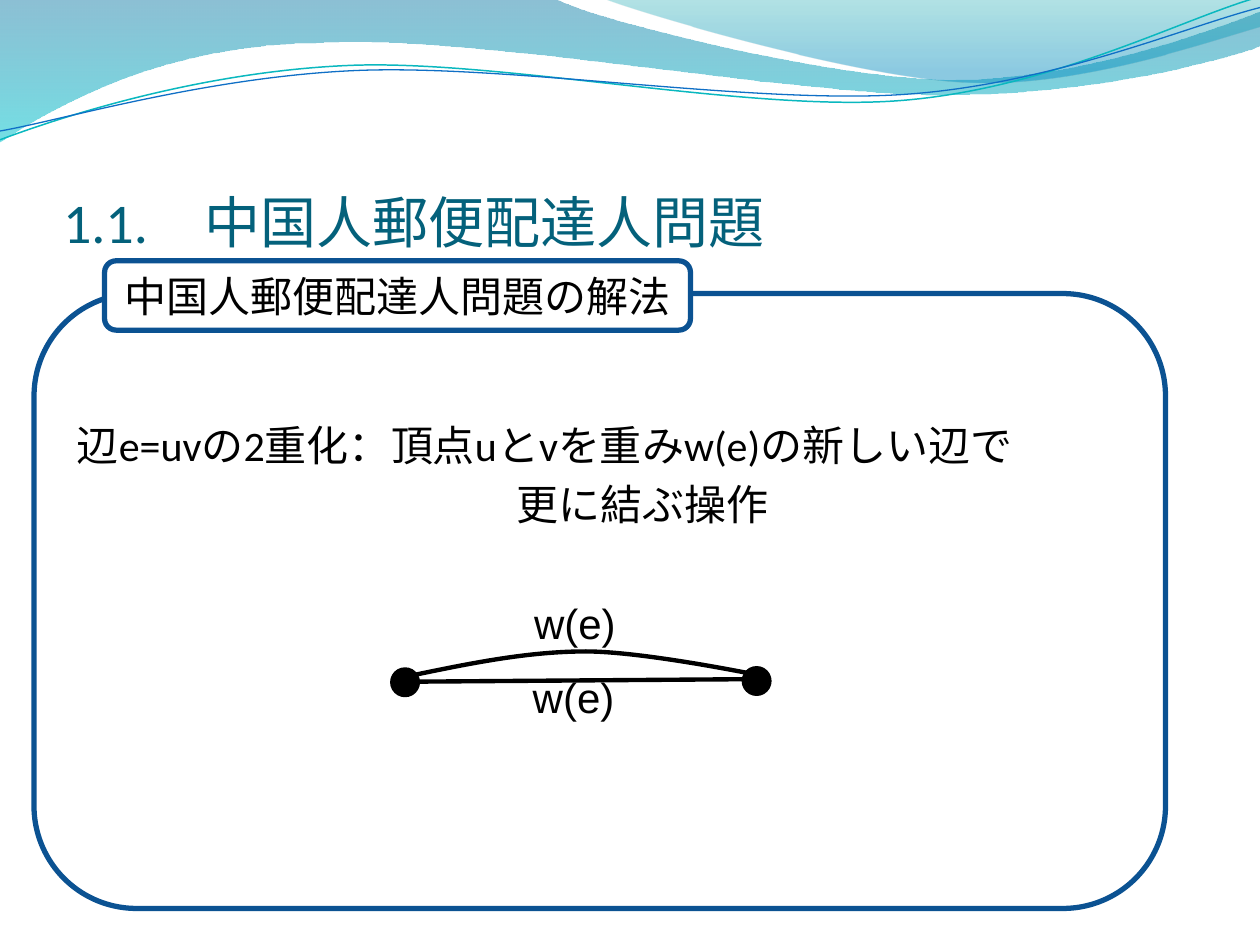
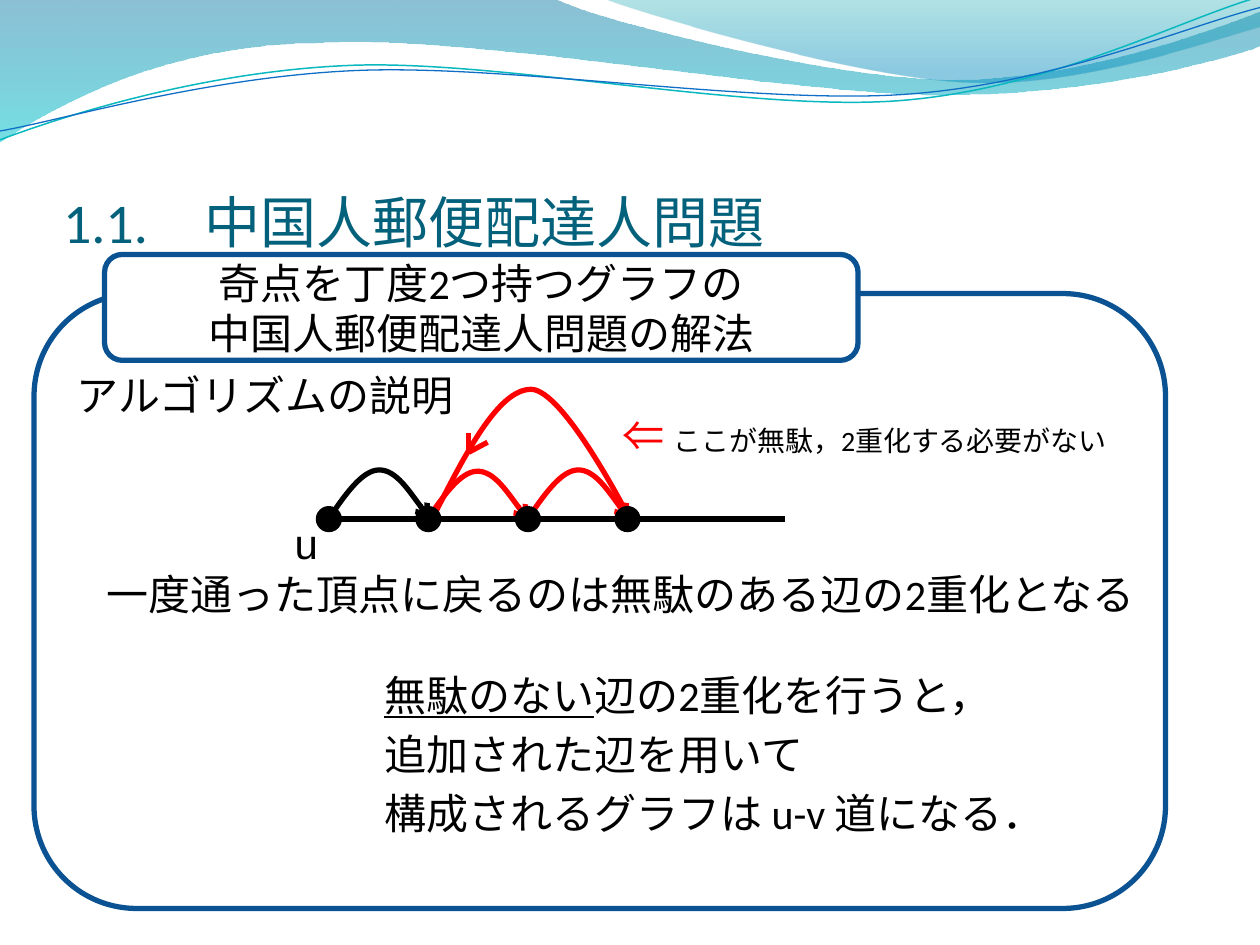
from dataclasses import dataclass

from pptx import Presentation
from pptx import util as u
from pptx.dml.color import RGBColor
from pptx.enum import shapes, text
from pptx.oxml.ns import qn
from lxml import etree

KIND = shapes.MSO_SHAPE
ALIGN = text.PP_ALIGN
ANCHOR = text.MSO_ANCHOR


@dataclass(frozen=True)
class Theme:
    ink: str = "000000"
    paper: str = "FFFFFF"
    title: str = "04617B"
    frame: str = "0B5292"
    red: str = "FF0000"
    teal: str = "0AB8BF"
    blue: str = "0F6FC6"
    deep: tuple = ((0, "0074A1", 45), (1, "00C6CF", 55))
    light: tuple = ((0, "00A1A9", 30), (0.8, "008BBF", 45))
    face: str = "Calibri"
    label: str = "Arial"
    head: int = 32
    body: int = 24
    note: int = 16
    gap: int = 5


def put(item, values):
    for name, value in values.items():
        setattr(item, name, value)


def box(left, top, width, height):
    return {"left": u.Inches(left), "top": u.Inches(top),
            "width": u.Inches(width), "height": u.Inches(height)}


class Deck:
    def __init__(self, theme):
        self.theme = theme
        self.prs = Presentation()
        put(self.prs, {"slide_width": u.Inches(10), "slide_height": u.Inches(7.5)})
        self.layout = self.prs.slide_layouts[1]
        self.slide = None

    def page(self, title):
        self.slide = self.prs.slides.add_slide(self.layout)
        head = self.slide.shapes.title
        put(head, box(0.5, 0.77, 9, 1.25))
        put(head.text_frame, {"margin_left": 0, "margin_right": 0,
                              "margin_bottom": 0, "vertical_anchor": ANCHOR.BOTTOM})
        self.words(head.text_frame, [title], size=self.theme.head, hue=self.theme.title)

    def words(self, frame, lines, size=None, hue=None, face=None, align=ALIGN.LEFT):
        put(frame, {"word_wrap": True, "auto_size": text.MSO_AUTO_SIZE.NONE})
        for i, line in enumerate(lines):
            para = frame.add_paragraph() if i else frame.paragraphs[0]
            put(para, {"alignment": align, "space_before": u.Pt(0)})
            for part in [line] if isinstance(line, str) else line:
                words, style = (part, {}) if isinstance(part, str) else part
                run = para.add_run()
                run.text = words
                run.font.color.rgb = RGBColor.from_string(
                    style.get("hue", hue or self.theme.ink))
                put(run.font, {"name": face or self.theme.face,
                               "size": u.Pt(style.get("size", size or self.theme.body)),
                               "underline": style.get("line")})

    def body(self, place, lines, shifts):
        item = self.slide.placeholders[1]
        put(item, box(*place))
        self.words(item.text_frame, lines)
        for para, shift in zip(item.text_frame.paragraphs, shifts):
            para.space_before = u.Pt(self.theme.gap)
            props = para._p.get_or_add_pPr()
            props.set("marL", str(u.Inches(shift)))
            props.set("indent", "0")
            etree.SubElement(props, qn("a:buNone"))

    def label(self, place, line, face=None, wrap=True):
        item = self.slide.shapes.add_textbox(*box(*place).values())
        self.words(item.text_frame, [line], face=face)
        item.text_frame.word_wrap = wrap

    def paint(self, item, fill=None, line=None, width=1):
        item.shadow.inherit = False
        if fill:
            item.fill.solid()
            item.fill.fore_color.rgb = RGBColor.from_string(fill)
        else:
            item.fill.background()
        if line:
            item.line.color.rgb = RGBColor.from_string(line)
            item.line.width = u.Pt(width)
        else:
            item.line.fill.background()

    def shape(self, kind, place, fill, line, width):
        item = self.slide.shapes.add_shape(kind, *box(*place).values())
        self.paint(item, fill, line, width)
        return item

    def frame(self):
        self.shape(KIND.ROUNDED_RECTANGLE, (0.27, 2.33, 8.98, 4.88),
                   None, self.theme.frame, 3)

    def tab(self, place, lines):
        item = self.shape(KIND.ROUNDED_RECTANGLE, place,
                          self.theme.paper, self.theme.frame, 3)
        item.text_frame.vertical_anchor = ANCHOR.MIDDLE
        self.words(item.text_frame, lines, align=ALIGN.CENTER)

    def dot(self, left, top, size):
        self.shape(KIND.OVAL, (left, top, size, size),
                   self.theme.ink, self.theme.ink, 2)

    def line(self, start, end, hue, width):
        ends = [u.Inches(v) for v in (*start, *end)]
        item = self.slide.shapes.add_connector(shapes.MSO_CONNECTOR.STRAIGHT, *ends)
        item.line.color.rgb = RGBColor.from_string(hue)
        item.line.width = u.Pt(width)
        etree.SubElement(item.element.spPr, qn("a:effectLst"))

    def curve(self, start, parts, close=False, line=None, width=1):
        maker = self.slide.shapes.build_freeform(*map(u.Inches, start), scale=1.0)
        maker.add_line_segments(
            [tuple(map(u.Inches, spot)) for part in parts for spot in part], close=close)
        item = maker.convert_to_shape()
        nodes = iter(item.element.findall(".//" + qn("a:lnTo")))
        for part in parts:
            first, *rest = [next(nodes) for _ in part]
            if rest:
                bend = etree.Element(qn("a:cubicBezTo"))
                first.addprevious(bend)
                for node in (first, *rest):
                    bend.append(node[0])
                    node.getparent().remove(node)
        self.paint(item, line=line, width=width)
        return item

    def arc(self, left, base, wide, high, hue, width, arrow=False):
        top, end = base - high, (left + wide, base)
        rise = ((left + wide / 6, base - high / 2), (left + wide / 3, top),
                (left + wide / 2, top))
        fall = ((left + wide * 2 / 3, top), end, end)
        item = self.curve((left, base), [rise, fall], line=hue, width=width)
        if arrow:
            etree.SubElement(item.element.spPr.find(qn("a:ln")),
                             qn("a:tailEnd"), type="arrow")

    def band(self, start, parts, stops):
        item = self.curve(start, parts, close=True)
        item.fill.gradient()
        item.fill.gradient_angle = 270
        for stop, (place, hue, _) in zip(item.fill.gradient_stops, stops):
            stop.position = place
            stop.color.rgb = RGBColor.from_string(hue)
        tints = item.element.spPr.find(qn("a:gradFill")).iter(qn("a:srgbClr"))
        for tint, (_, _, alpha) in zip(list(tints), stops):
            etree.SubElement(tint, qn("a:alpha"), val=str(alpha * 1000))
        return item

    def waves(self):
        t = self.theme
        items = [
            self.band((0, -0.01), [
                ((4.4, -0.01),),
                ((4.76, 0.17), (6.64, 0.63), (7.58, 0.63)),
                ((8.53, 0.63), (9.58, 0.26), (10, 0.09)),
                ((10.01, 0.36),),
                ((9.83, 0.44), (8.7, 0.76), (7.46, 0.75)),
                ((6.22, 0.75), (3.82, 0.28), (2.57, 0.34)),
                ((1.29, 0.35), (0.46, 0.83), (-0.01, 1.13))], t.deep),
            self.band((4.79, -0.01), [
                ((5.09, 0.11), (6.82, 0.62), (7.69, 0.65)),
                ((8.56, 0.69), (9.61, 0.32), (10, 0.21)),
                ((10, 0),)], t.light),
            self.curve((0, 1.11), [
                ((0.48, 0.93), (1.58, 0.57), (2.77, 0.52)),
                ((3.95, 0.47), (5.93, 0.89), (7.13, 0.8)),
                ((8.33, 0.71), (9.38, 0.15), (9.98, -0.02))], line=t.teal, width=0.85),
            self.curve((0, 1.04), [
                ((0.47, 0.96), (1.64, 0.61), (2.83, 0.56)),
                ((4.03, 0.51), (5.97, 0.83), (7.17, 0.75)),
                ((8.36, 0.67), (9.41, 0.21), (10, 0.06))], line=t.blue, width=0.75)]
        for i, item in enumerate(items):
            item.element.find(".//" + qn("p:cNvPr")).set("id", str(20 + i))
            self.layout.shapes.element.insert(2 + i, item.element)


def double(deck, title):
    t = deck.theme
    deck.page(title)
    deck.waves()
    deck.body((0.51, 3.28, 8.82, 0.99),
              ["辺e=uvの2重化：頂点uとvを重みw(e)の新しい辺で", "更に結ぶ操作"], (0, 3.49))
    deck.arc(3.27, 5.36, 2.76, 0.19, t.ink, 2.5)
    for left, top in ((3.11, 5.31), (5.9, 5.3)):
        deck.dot(left, top, 0.21)
    deck.line((3.32, 5.41), (6, 5.39), t.ink, 2.5)
    for left, top in ((4.13, 5.28), (4.14, 4.69)):
        deck.label((left, top, 0.86, 0.51), "w(e)", t.label, False)
    deck.frame()
    deck.tab((0.83, 2.07, 4.65, 0.55), ["中国人郵便配達人問題の解法"])


def waste(deck, title):
    t = deck.theme
    deck.page(title)
    for left, base in ((3.38, 4.14), (4.18, 4.13)):
        deck.arc(left, base, 0.82, 0.4, t.red, 3, True)
    deck.arc(3.43, 4.12, 1.57, 1.03, t.red, 3)
    deck.frame()
    deck.tab((0.83, 2.02, 5.98, 0.84),
             ["奇点を丁度2つ持つグラフの", "中国人郵便配達人問題の解法"])
    deck.line((2.64, 4.12), (6.23, 4.12), t.ink, 3)
    deck.body((2.95, 5.26, 6.2, 1.6),
              [[("無駄のない", {"line": True}), "辺の2重化を行うと，"],
               "追加された辺を用いて", "構成されるグラフは u-v 道になる．"], (0, 0, 0))
    deck.label((2.24, 4.06, 0.39, 0.51), "u", t.label, False)
    deck.label((0.51, 2.88, 8.82, 0.51), "アルゴリズムの説明")
    for i in range(4):
        deck.dot(2.52 + 0.79 * i, 4.03, 0.18)
    deck.arc(2.6, 4.13, 0.82, 0.4, t.ink, 3, True)
    deck.label((0.75, 4.46, 8.82, 0.51),
               "一度通った頂点に戻るのは無駄のある辺の2重化となる")
    for start in ((3.72, 3.44), (3.87, 3.51)):
        deck.line(start, (3.72, 3.59), t.red, 3)
    deck.label((4.84, 3.2, 4.57, 0.5),
               [("⇐ ", {"hue": t.red}),
                ("ここが無駄，2重化する必要がない", {"size": t.note})])


def main():
    deck = Deck(Theme())
    title = "1.1.　中国人郵便配達人問題"
    double(deck, title)
    waste(deck, title)
    deck.prs.save("out.pptx")


if __name__ == "__main__":
    main()
